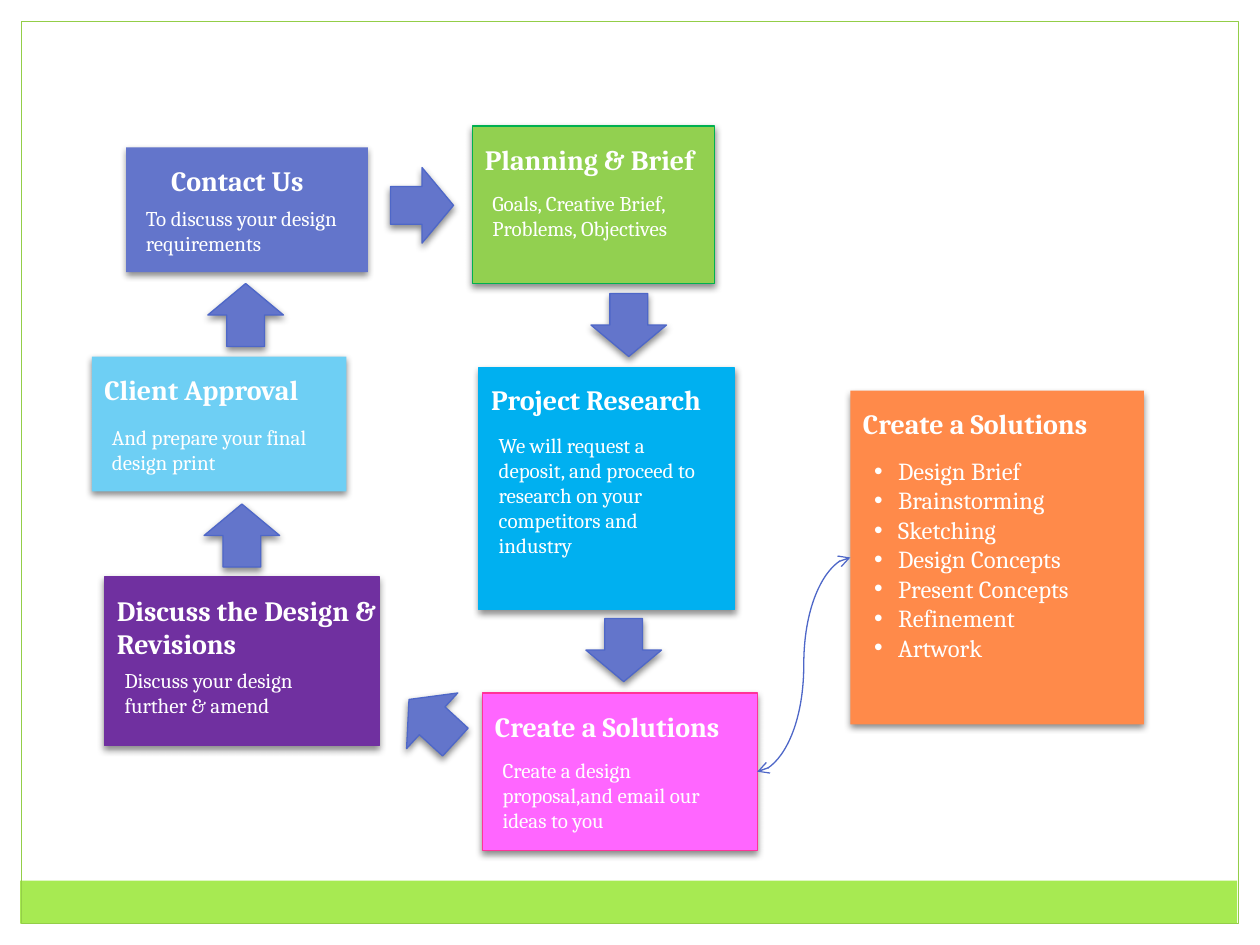
from typing import NamedTuple, Optional

from lxml.etree import SubElement
from pptx import Presentation
from pptx.dml.color import RGBColor
from pptx.enum.shapes import MSO_CONNECTOR as Link, MSO_SHAPE as Kind
from pptx.enum.text import MSO_AUTO_SIZE as Fit
from pptx.oxml.ns import qn
from pptx.util import Inches, Pt

WHITE = RGBColor(0xFF, 0xFF, 0xFF)
INDIGO = RGBColor(0x63, 0x75, 0xCB)
EDGE = RGBColor(0x4E, 0x67, 0xC8)
LIME = RGBColor(0xA7, 0xEA, 0x52)
FRAME = RGBColor(0x93, 0xCE, 0x48)
GREEN = RGBColor(0x92, 0xD0, 0x50)
LEAF = RGBColor(0x00, 0xB0, 0x50)
BLUE = RGBColor(0x00, 0xB0, 0xF0)
PINK = RGBColor(0xFF, 0x66, 0xFF)
ROSE = RGBColor(0xFF, 0x33, 0x99)
PURPLE = RGBColor(0x70, 0x30, 0xA0)
SKY = RGBColor(0x6E, 0xCF, 0xF4)
ORANGE = RGBColor(0xFF, 0x8A, 0x4A)

Area = tuple[float, float, float, float]
HEAD = {"size": Pt(16), "bold": True}
BODY = {"size": Pt(12)}
ITEM = {"size": Pt(14)}


class Card(NamedTuple):
    area: Area
    fill: RGBColor
    line: Optional[RGBColor]
    head: str
    head_at: Area
    body: list[str]
    body_at: Area
    wrap: bool = False


class Arrow(NamedTuple):
    left: float
    top: float
    turn: float


CARDS = [
    Card((1, 1.17, 1.92, 0.99), INDIGO, None,
         "Contact Us", (1.26, 1.25, 1.39, 0.37),
         ["To discuss your design requirements"], (1.06, 1.58, 1.86, 0.5)),
    Card((3.75, 1, 1.92, 1.25), GREEN, LEAF,
         "Planning & Brief", (3.75, 1.08, 1.88, 0.37),
         ["Goals, Creative Brief, Problems, Objectives"],
         (3.81, 1.46, 1.86, 0.71)),
    Card((3.8, 2.92, 2.03, 1.92), BLUE, BLUE,
         "Project Research", (3.8, 2.99, 2.03, 0.37),
         ["We will request a deposit, and proceed to research on your "
          "competitors and industry"], (3.86, 3.38, 1.86, 1.31)),
    Card((0.83, 4.58, 2.18, 1.34), PURPLE, PURPLE,
         "Discuss the Design & Revisions", (0.83, 4.66, 2.33, 0.64),
         ["Discuss your design further & amend"], (0.89, 5.25, 2, 0.5), True),
    Card((0.73, 2.83, 2.02, 1.07), SKY, None,
         "Client Approval", (0.73, 2.91, 2.33, 0.37),
         ["And prepare your final design print"], (0.79, 3.32, 2, 0.5), True),
]
DRAFT = Card((3.83, 5.5, 2.18, 1.25), PINK, ROSE,
             "Create a Solutions", (3.83, 5.58, 2.18, 0.37),
             ["Create a design proposal,and email our ideas to you"],
             (3.89, 5.96, 2, 0.71))
STEPS = Card((6.75, 3.1, 2.33, 2.65), ORANGE, None,
             "Create a Solutions", (6.75, 3.18, 2.18, 0.37),
             ["Design Brief", "Brainstorming", "Sketching", "Design Concepts",
              "Present Concepts", "Refinement", "Artwork"],
             (6.84, 3.57, 2, 1.99))

ARROWS = [
    Arrow(3.1, 1.33, 0), Arrow(4.74, 2.28, 90), Arrow(4.7, 4.86, 90),
    Arrow(3.18, 5.42, 222.6), Arrow(1.67, 3.95, 270), Arrow(1.7, 2.2, 270),
]


def add_shape(slide, kind, area: Area, fill=None, line=None, shade=True):
    shape = slide.shapes.add_shape(kind, *map(Inches, area))
    if fill is None:
        shape.fill.background()
    else:
        shape.fill.solid()
        shape.fill.fore_color.rgb = fill
    if line is None:
        shape.line.fill.background()
    else:
        shape.line.color.rgb = line
        shape.line.width = Pt(0.75)
    shape.shadow.inherit = False
    if shade:
        # Soft shadow straight down
        effect = shape.element.spPr.find(qn("a:effectLst"))
        outer = SubElement(effect, qn("a:outerShdw"), blurRad=str(Pt(4)),
                           dist=str(Pt(2)), dir="5400000", rotWithShape="0")
        tone = SubElement(outer, qn("a:srgbClr"), val="000000")
        SubElement(tone, qn("a:alpha"), val="45000")
    return shape


def add_text(slide, area: Area, lines: list[str], style: dict, wrap=True):
    frame = slide.shapes.add_textbox(*map(Inches, area)).text_frame
    frame.word_wrap = wrap
    frame.auto_size = Fit.SHAPE_TO_FIT_TEXT
    frame.text = "\n".join(lines)
    for para in frame.paragraphs:
        font = para.runs[0].font
        font.name = "Cambria"
        font.color.rgb = WHITE
        for key, value in style.items():
            setattr(font, key, value)
        if len(lines) > 1:
            props = para._p.get_or_add_pPr()
            props.set("marL", str(Inches(0.19)))
            props.set("indent", str(Inches(-0.19)))
            SubElement(props, qn("a:buFont"), typeface="Arial")
            SubElement(props, qn("a:buChar"), char="•")


def add_card(slide, card: Card):
    box = add_shape(slide, Kind.RECTANGLE, card.area, card.fill, card.line)
    add_text(slide, card.head_at, [card.head], HEAD, card.wrap)
    add_text(slide, card.body_at, card.body,
             ITEM if len(card.body) > 1 else BODY)
    return box


def add_curve(slide, start, end):
    curve = slide.shapes.add_connector(Link.CURVE, 0, 0, 0, 0)
    curve.begin_connect(start, 3)
    curve.end_connect(end, 1)
    curve.line.color.rgb = EDGE
    curve.line.width = Pt(0.75)
    for tip in ("a:headEnd", "a:tailEnd"):
        SubElement(curve.line._get_or_add_ln(), qn(tip), type="arrow")
    SubElement(curve.element.spPr, qn("a:effectLst"))


def main():
    deck = Presentation()
    deck.slide_width, deck.slide_height = Inches(10), Inches(7.5)
    slide = deck.slides.add_slide(deck.slide_layouts[6])

    # Footer band and page frame
    add_shape(slide, Kind.RECTANGLE, (0.16, 6.99, 9.66, 0.34), LIME,
              shade=False)
    add_shape(slide, Kind.RECTANGLE, (0.17, 0.17, 9.66, 7.16), line=FRAME,
              shade=False)

    # Process cards
    for card in CARDS:
        add_card(slide, card)
    draft = add_card(slide, DRAFT)

    # Arrows around the cycle
    for arrow in ARROWS:
        area = (arrow.left, arrow.top, 0.5, 0.6)
        shape = add_shape(slide, Kind.RIGHT_ARROW, area, INDIGO, EDGE)
        shape.rotation = arrow.turn

    # Detail card, linked to its stage
    steps = add_card(slide, STEPS)
    add_curve(slide, draft, steps)

    deck.save("out.pptx")


if __name__ == "__main__":
    main()
